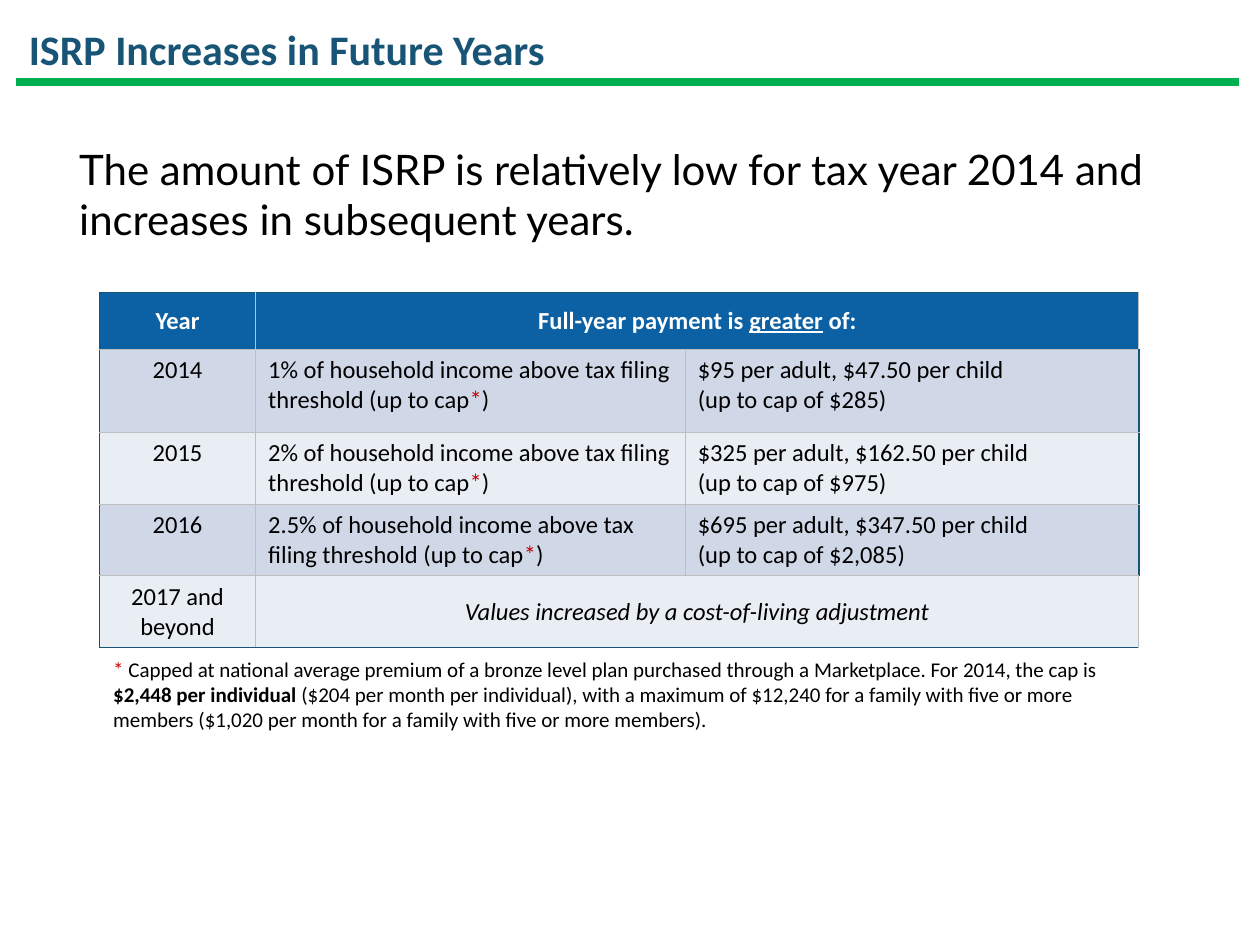
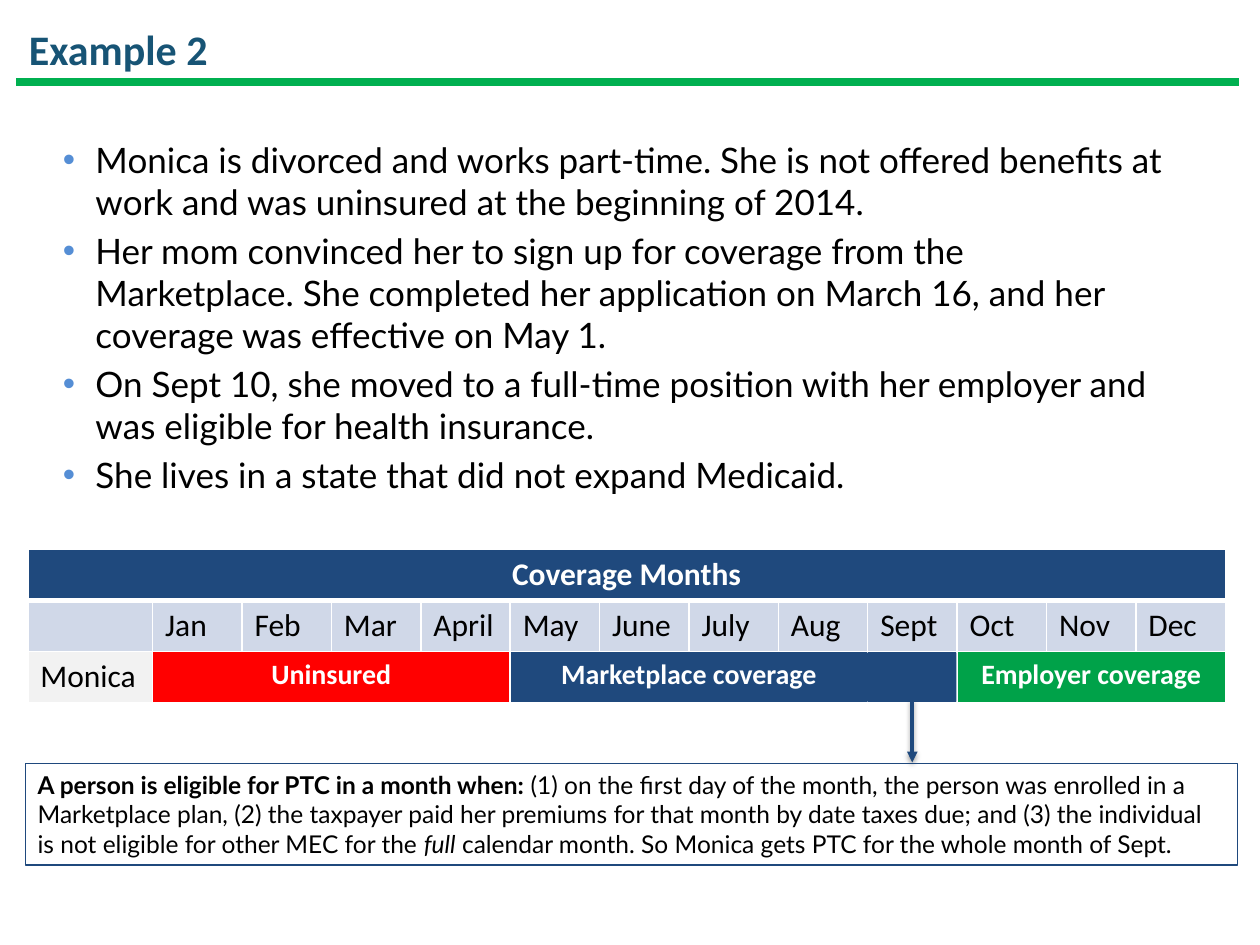
from dataclasses import dataclass, field

from lxml.etree import SubElement
from pptx import Presentation
from pptx.dml.color import RGBColor
from pptx.enum.shapes import MSO_CONNECTOR, MSO_SHAPE
from pptx.enum.text import MSO_ANCHOR, PP_ALIGN
from pptx.oxml import parse_xml
from pptx.oxml.ns import nsdecls, qn
from pptx.util import Pt


@dataclass(frozen=True)
class Theme:
    heading_font: str = "Calibri"
    body_font: str = "Lato"
    teal: str = "175475"
    green: str = "00B050"
    black: str = "000000"
    white: str = "FFFFFF"
    navy: str = "1F497D"
    header_blue: str = "0C61A4"
    band_dark: str = "D0D8E8"
    band_light: str = "E9EDF4"
    pale_gray: str = "F2F2F2"
    rule_gray: str = "BFBFBF"
    dark_red: str = "C00000"
    uninsured_red: str = "FF0000"
    employer_green: str = "00A249"
    bullet_blue: str = "558ED5"
    title_size: float = 24
    lead_size: float = 24
    bullet_size: float = 20
    month_size: float = 18
    coverage_size: float = 16
    table_size: float = 14
    footnote_size: float = 12


THEME = Theme()


@dataclass
class Cell:
    paragraphs: list
    fill: str
    style: dict
    columns: int = 1
    align: PP_ALIGN = PP_ALIGN.LEFT
    anchor: MSO_ANCHOR = MSO_ANCHOR.TOP
    changes: dict = field(default_factory=dict)


def text_style(name, size, color=THEME.black, **extra):
    return {"name": name, "size": Pt(size), "color": color, **extra}


def set_attributes(target, values):
    for name, value in values.items():
        setattr(target, name, value)


def apply_font(font, style):
    values = dict(style)
    font.color.rgb = RGBColor.from_string(values.pop("color"))
    set_attributes(font, values)


def write_text(frame, paragraphs, style, **paragraph_format):
    for index, content in enumerate(paragraphs):
        para = frame.add_paragraph() if index else frame.paragraphs[0]
        set_attributes(para, paragraph_format)
        spans = [(content, {})] if isinstance(content, str) else content
        for text, changes in spans:
            span = para.add_run()
            span.text = text
            apply_font(span.font, {**style, **changes})


def add_text(page, place, paragraphs, style, anchor=MSO_ANCHOR.TOP):
    box = page.shapes.add_textbox(*map(Pt, place))
    set_attributes(box.text_frame, {"word_wrap": True, "vertical_anchor": anchor})
    write_text(box.text_frame, paragraphs, style)
    return box


def add_bullets(page, place, items, style):
    box = add_text(page, place, items, style)
    for para in box.text_frame.paragraphs:
        para.space_before = Pt(4)
        properties = para._p.get_or_add_pPr()
        properties.set("marL", str(Pt(18.7)))
        properties.set("indent", str(-Pt(18.7)))
        color = SubElement(properties, qn("a:buClr"))
        SubElement(color, qn("a:srgbClr"), val=THEME.bullet_blue)
        SubElement(properties, qn("a:buFont"), typeface="Arial")
        SubElement(properties, qn("a:buChar"), char="•")


def add_rectangle(page, place, fill=None, line=None):
    shape = page.shapes.add_shape(MSO_SHAPE.RECTANGLE, *map(Pt, place))
    shape.shadow.inherit = False
    if fill:
        shape.fill.solid()
        shape.fill.fore_color.rgb = RGBColor.from_string(fill)
    else:
        shape.fill.background()
    if line:
        shape.line.color.rgb = RGBColor.from_string(line)
        shape.line.width = Pt(0.75)
    else:
        shape.line.fill.background()
    return shape


def add_line(page, start, end, color, width):
    line = page.shapes.add_connector(MSO_CONNECTOR.STRAIGHT, *map(Pt, (*start, *end)))
    line.line.color.rgb = RGBColor.from_string(color)
    line.line.width = Pt(width)
    SubElement(line._element.spPr, qn("a:effectLst"))
    return line


def add_arrow(page, start, end, color, width):
    arrow = add_line(page, start, end, color, width)
    properties = arrow._element.spPr
    SubElement(properties.find(qn("a:ln")), qn("a:tailEnd"), type="triangle")
    shadow = SubElement(
        properties.find(qn("a:effectLst")), qn("a:outerShdw"),
        blurRad=str(Pt(3.1)), dist=str(Pt(1.6)), dir="5400000", rotWithShape="0",
    )
    tint = SubElement(shadow, qn("a:srgbClr"), val=THEME.black)
    SubElement(tint, qn("a:alpha"), val="38000")


def set_borders(cell, borders):
    properties = cell._tc.get_or_add_tcPr()
    for index, (side, (color, width)) in enumerate(borders.items()):
        properties.insert(index, parse_xml(
            f'<a:ln{side} {nsdecls("a")} w="{Pt(width)}"><a:solidFill>'
            f'<a:srgbClr val="{color}"/></a:solidFill></a:ln{side}>'
        ))


def add_grid(page, corner, widths, heights, rows, outline, inner, header_rule):
    place = (*corner, sum(widths), sum(heights))
    table = page.shapes.add_table(len(heights), len(widths), *map(Pt, place)).table
    set_attributes(table, {"first_row": False, "horz_banding": False})
    for column, width in zip(table.columns, widths):
        column.width = Pt(width)
    for row, height in zip(table.rows, heights):
        row.height = Pt(height)
    last_row, last_column = len(heights) - 1, len(widths) - 1
    for r, contents in enumerate(rows):
        for c in range(len(widths)):
            set_borders(table.cell(r, c), {
                "L": outline if c == 0 else inner,
                "R": outline if c == last_column else inner,
                "T": outline if r == 0 else header_rule if r == 1 else inner,
                "B": outline if r == last_row else header_rule if r == 0 else inner,
            })
        c = 0
        for content in contents:
            cell = table.cell(r, c)
            end = c + content.columns
            if content.columns > 1:
                cell.merge(table.cell(r, end - 1))
            for k in range(c, end):
                filled = table.cell(r, k)
                filled.fill.solid()
                filled.fill.fore_color.rgb = RGBColor.from_string(content.fill)
            cell.vertical_anchor = content.anchor
            write_text(cell.text_frame, content.paragraphs,
                       {**content.style, **content.changes}, alignment=content.align)
            c = end


def add_page(deck, title):
    page = deck.slides.add_slide(deck.slide_layouts[6])
    add_line(page, (9.4, 46.8), (707.8, 46.8), THEME.green, 4.75)
    style = text_style(THEME.heading_font, THEME.title_size, THEME.teal, bold=True)
    add_text(page, (9.4, 7.2, 648, 41), [title], style, MSO_ANCHOR.MIDDLE)
    return page


def build_payment_page(deck):
    page = add_page(deck, "ISRP Increases in Future Years")
    red = {"color": THEME.dark_red}
    add_text(page, (38.2, 78.5, 653, 65.5), [
        "The amount of ISRP is relatively low for tax year 2014 and increases in subsequent years."
    ], text_style(THEME.body_font, THEME.lead_size))

    style = text_style(THEME.heading_font, THEME.table_size)
    centered = {"align": PP_ALIGN.CENTER, "anchor": MSO_ANCHOR.MIDDLE}
    header = {**centered, "changes": {"color": THEME.white, "bold": True}}
    greater = [("Full-year payment is ", {}), ("greater", {"underline": True}), (" of:", {})]
    rows = [[
        Cell(["Year"], THEME.header_blue, style, **header),
        Cell([greater], THEME.header_blue, style, columns=2, **header),
    ]]
    payments = [
        ("2014", "1%", "$95", "$47.50", "$285"),
        ("2015", "2%", "$325", "$162.50", "$975"),
        ("2016", "2.5%", "$695", "$347.50", "$2,085"),
    ]
    for index, (year, percent, adult, child, cap) in enumerate(payments):
        band = (THEME.band_dark, THEME.band_light)[index % 2]
        share = [(f"{percent} of household income above tax filing threshold (up to cap", {}),
                 ("*", red), (")", {})]
        amounts = [f"{adult} per adult, {child} per child", f"(up to cap of {cap})"]
        rows.append([
            Cell([year], band, style, align=PP_ALIGN.CENTER),
            Cell([share], band, style),
            Cell(amounts, band, style),
        ])
    rows.append([
        Cell(["2017 and beyond"], THEME.band_light, style, **centered),
        Cell(["Values increased by a cost-of-living adjustment"], THEME.band_light, style,
             columns=2, changes={"italic": True}, **centered),
    ])
    gray_rule = (THEME.rule_gray, 0.5)
    add_grid(page, (56.9, 167.2), [89.2, 245.5, 259.2], [32.4, 47.5, 41, 41, 41],
             rows, (THEME.teal, 1), gray_rule, gray_rule)

    add_text(page, (57.6, 371.5, 593.3, 51), [[
        ("* ", red),
        ("Capped at national average premium of a bronze level plan purchased through "
         "a Marketplace. For 2014, the cap is ", {}),
        ("$2,448 per individual ", {"bold": True}),
        ("($204 per month per individual), with a maximum of $12,240 for a family with five "
         "or more members ($1,020 per month for a family with five or more members).", {}),
    ]], text_style(THEME.heading_font, THEME.footnote_size))


def build_example_page(deck):
    page = add_page(deck, "Example 2")
    add_bullets(page, (28.8, 75.6, 648, 219.6), [
        "Monica is divorced and works part-time. She is not offered benefits at work and was "
        "uninsured at the beginning of 2014.",
        "Her mom convinced her to sign up for coverage from the Marketplace. She completed her "
        "application on March 16, and her coverage was effective on May 1.",
        "On Sept 10, she moved to a full-time position with her employer and was eligible for "
        "health insurance.",
        "She lives in a state that did not expand Medicaid.",
    ], text_style(THEME.body_font, THEME.bullet_size))

    style = text_style(THEME.heading_font, THEME.month_size)
    heading = {**style, "color": THEME.white, "bold": True}
    coverage = {**heading, "size": Pt(THEME.coverage_size)}
    months = "Jan Feb Mar April May June July Aug Sept Oct Nov Dec".split()
    periods = [
        (["Uninsured"], THEME.uninsured_red, 4),
        (["Marketplace coverage"], THEME.navy, 4),
        ([], THEME.navy, 1),
        (["Employer coverage"], THEME.employer_green, 3),
    ]
    rows = [
        [Cell(["Coverage Months"], THEME.navy, heading, columns=len(months) + 1,
              align=PP_ALIGN.CENTER)],
        [Cell([], THEME.band_dark, style)]
        + [Cell([month], THEME.band_dark, style) for month in months],
        [Cell(["Monica"], THEME.pale_gray, style)]
        + [Cell(label, fill, coverage, columns=count, align=PP_ALIGN.CENTER)
           for label, fill, count in periods],
    ]
    white_rule = (THEME.white, 1)
    add_grid(page, (15.9, 314), [71.3] + [51.1] * len(months), [29.2] * 3,
             rows, white_rule, white_rule, (THEME.white, 3))

    add_arrow(page, (521.3, 399.6), (521.3, 435.6), THEME.navy, 2)
    note = add_rectangle(page, (14.4, 436.3, 692.6, 58), line=THEME.navy)
    set_attributes(note.text_frame, {"word_wrap": True, "vertical_anchor": MSO_ANCHOR.TOP})
    write_text(note.text_frame, [[
        ("A person is eligible for PTC in a month when: ", {"bold": True}),
        ("(1) on the first day of the month, the person was enrolled in a Marketplace plan, "
         "(2) the taxpayer paid her premiums for that month by date taxes due; and (3) the "
         "individual is not eligible for other MEC for the ", {}),
        ("full", {"italic": True}),
        (" calendar month. So Monica gets PTC for the whole month of Sept.", {}),
    ]], text_style(THEME.body_font, THEME.table_size), alignment=PP_ALIGN.LEFT)
    add_rectangle(page, (474.5, 373, 72, 28), fill=THEME.navy)


def main():
    deck = Presentation()
    set_attributes(deck, {"slide_width": Pt(720), "slide_height": Pt(540)})
    build_payment_page(deck)
    build_example_page(deck)
    deck.save("out.pptx")


if __name__ == "__main__":
    main()
